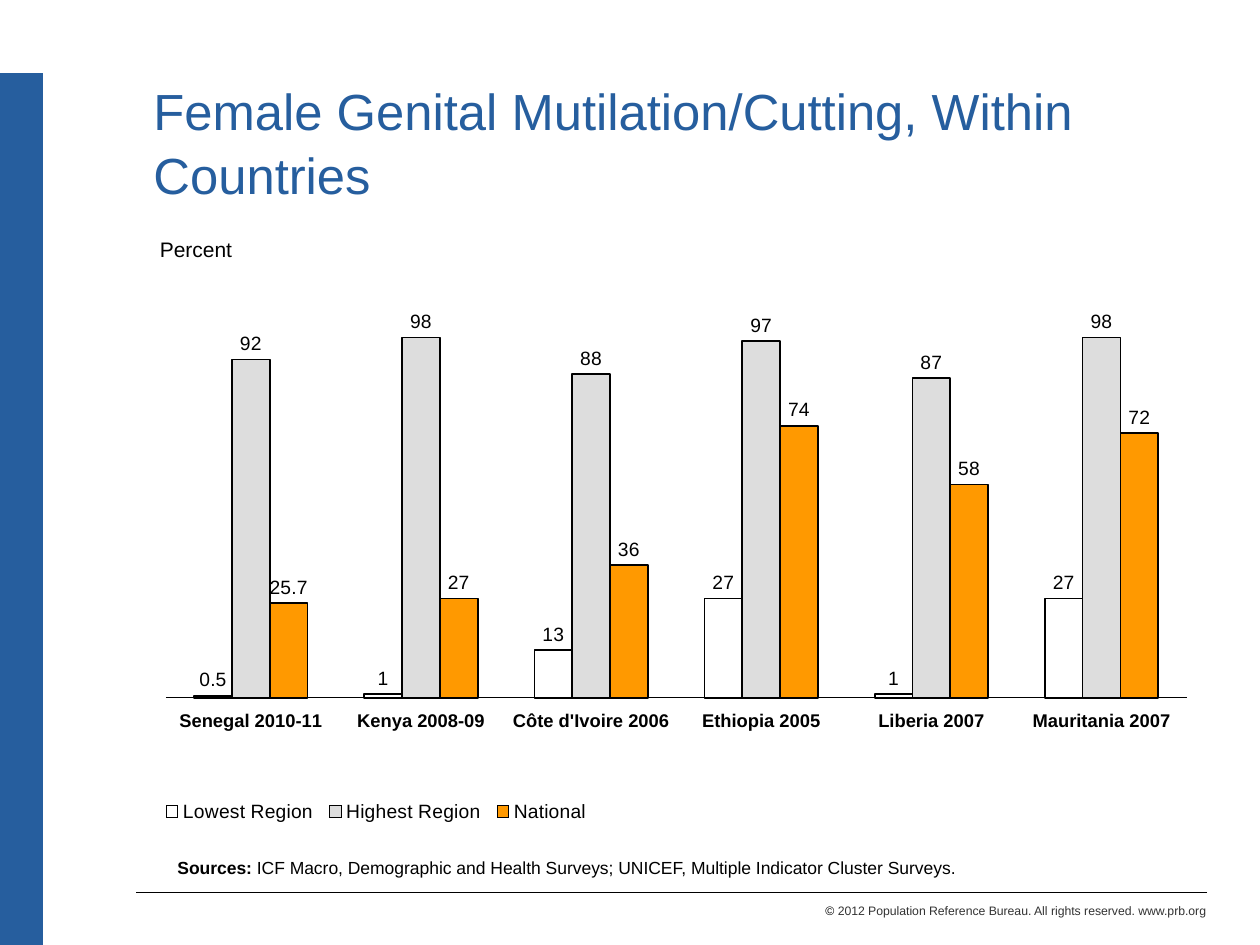
from lxml.etree import SubElement
from pptx import Presentation
from pptx.chart.data import CategoryChartData as ChartData
from pptx.dml.color import RGBColor
from pptx.enum.chart import XL_CHART_TYPE as ChartType
from pptx.enum.chart import XL_LABEL_POSITION as LabelPosition
from pptx.enum.chart import XL_LEGEND_POSITION as LegendPosition
from pptx.enum.chart import XL_TICK_LABEL_POSITION as TickLabels
from pptx.enum.chart import XL_TICK_MARK as TickMark
from pptx.enum.shapes import MSO_CONNECTOR as Connector
from pptx.enum.text import MSO_ANCHOR as Anchor
from pptx.enum.text import PP_ALIGN as Align
from pptx.oxml.ns import qn
from pptx.util import Inches, Pt

COLORS = {
    "blue": "265E9E",
    "black": "000000",
    "dark_gray": "333333",
    "white": "FFFFFF",
    "gray": "DDDDDD",
    "orange": "FF9900",
}


def style_font(font, size, color="black", bold=False):
    font.name = "Arial"
    font.size = Pt(size)
    font.bold = bold
    font.color.rgb = RGBColor.from_string(COLORS[color])


def add_text(spans, place, size, align=Align.LEFT, anchor=Anchor.TOP, wrap=True, spacing=1.0):
    box = page.shapes.add_textbox(*[Inches(length) for length in place])
    frame = box.text_frame
    frame.word_wrap = wrap
    frame.vertical_anchor = anchor
    para = frame.paragraphs[0]
    para.alignment = align
    para.line_spacing = spacing
    for text, color, bold in spans:
        span = para.add_run()
        span.text = text
        style_font(span.font, size, color, bold)


deck = Presentation()
deck.slide_width = Inches(10)
deck.slide_height = Inches(7.5)
page = deck.slides.add_slide(deck.slide_layouts[6])

for start_x, start_y, end_x, end_y, color, width in [
    (0.17, 0.58, 0.17, 7.5, "blue", 25),
    (9.58, 7.08, 1.08, 7.08, "black", 0.5),
]:
    rule = page.shapes.add_connector(
        Connector.STRAIGHT, Inches(start_x), Inches(start_y), Inches(end_x), Inches(end_y)
    )
    rule.line.color.rgb = RGBColor.from_string(COLORS[color])
    rule.line.width = Pt(width)
    SubElement(rule._element.spPr, qn("a:effectLst"))

add_text(
    [
        ("© ", "black", False),
        ("2012 Population Reference Bureau. All rights reserved. www.prb.org", "dark_gray", False),
    ],
    (4.25, 7.12, 5.42, 0.22),
    7,
    align=Align.RIGHT,
)
add_text(
    [("Female Genital Mutilation/Cutting, Within Countries", "blue", False)],
    (1.12, 0.58, 8.46, 1.08),
    29,
    anchor=Anchor.MIDDLE,
    spacing=1.05,
)

data = ChartData()
data.categories = [
    "Senegal 2010-11",
    "Kenya 2008-09",
    "Côte d'Ivoire 2006",
    "Ethiopia 2005",
    "Liberia 2007",
    "Mauritania 2007",
]
regions = [
    ("Lowest Region", (0.5, 1, 13, 27, 1, 27), "white"),
    ("Highest Region", (92, 98, 88, 97, 87, 98), "gray"),
    ("National", (25.7, 27, 36, 74, 58, 72), "orange"),
]
for name, values, color in regions:
    data.add_series(name, values)

chart = page.shapes.add_chart(
    ChartType.COLUMN_CLUSTERED, Inches(1.2), Inches(1.93), Inches(8.31), Inches(4.65), data
).chart
chart.has_title = False
style_font(chart.font, 14, bold=True)

category_axis = chart.category_axis
category_axis.major_tick_mark = TickMark.NONE
category_axis.tick_label_position = TickLabels.LOW
category_axis.format.line.color.rgb = RGBColor.from_string(COLORS["black"])
category_axis.format.line.width = Pt(0.25)
style_font(category_axis.tick_labels.font, 10.5, bold=True)

value_axis = chart.value_axis
value_axis.visible = False
value_axis.has_major_gridlines = False
value_axis.minimum_scale = 0
value_axis.maximum_scale = 120

plot = chart.plots[0]
plot.gap_width = 150
plot.overlap = 0
plot.vary_by_categories = False
for series, (name, values, color) in zip(plot.series, regions):
    series.invert_if_negative = False
    series.format.fill.solid()
    series.format.fill.fore_color.rgb = RGBColor.from_string(COLORS[color])
    series.format.line.color.rgb = RGBColor.from_string(COLORS["black"])
    series.format.line.width = Pt(1)
    labels = series.data_labels
    labels.show_value = True
    labels.position = LabelPosition.OUTSIDE_END
    style_font(labels.font, 11)

chart.has_legend = True
chart.legend.position = LegendPosition.BOTTOM
chart.legend.include_in_layout = False
style_font(chart.legend.font, 11)

plot_area = chart._chartSpace.chart.plotArea
legend_layout = SubElement(chart.legend._element, qn("c:layout"))
chart.legend._element.find(qn("c:legendPos")).addnext(legend_layout)
plot_layout = plot_area.find(qn("c:layout"))
if plot_layout is None:
    plot_layout = SubElement(plot_area, qn("c:layout"))
    plot_area.insert(0, plot_layout)
for layout, target, bounds in [
    (plot_layout, "inner", (0.014, 0.023, 0.975, 0.753)),
    (legend_layout, None, (0.005, 0.94, 0.42, 0.06)),
]:
    manual = SubElement(layout, qn("c:manualLayout"))
    settings = [("xMode", "edge"), ("yMode", "edge"), *zip("xywh", bounds)]
    if target:
        settings.insert(0, ("layoutTarget", target))
    for tag, value in settings:
        SubElement(manual, qn(f"c:{tag}")).set("val", str(value))

add_text([("Percent", "black", False)], (1.17, 1.83, 2.17, 0.3), 12)
add_text(
    [
        ("Sources: ", "black", True),
        (
            "ICF Macro, Demographic and Health Surveys; UNICEF, Multiple Indicator Cluster Surveys.",
            "black",
            False,
        ),
    ],
    (1.31, 6.75, 6.45, 0.27),
    10,
    wrap=False,
)

deck.save("out.pptx")
